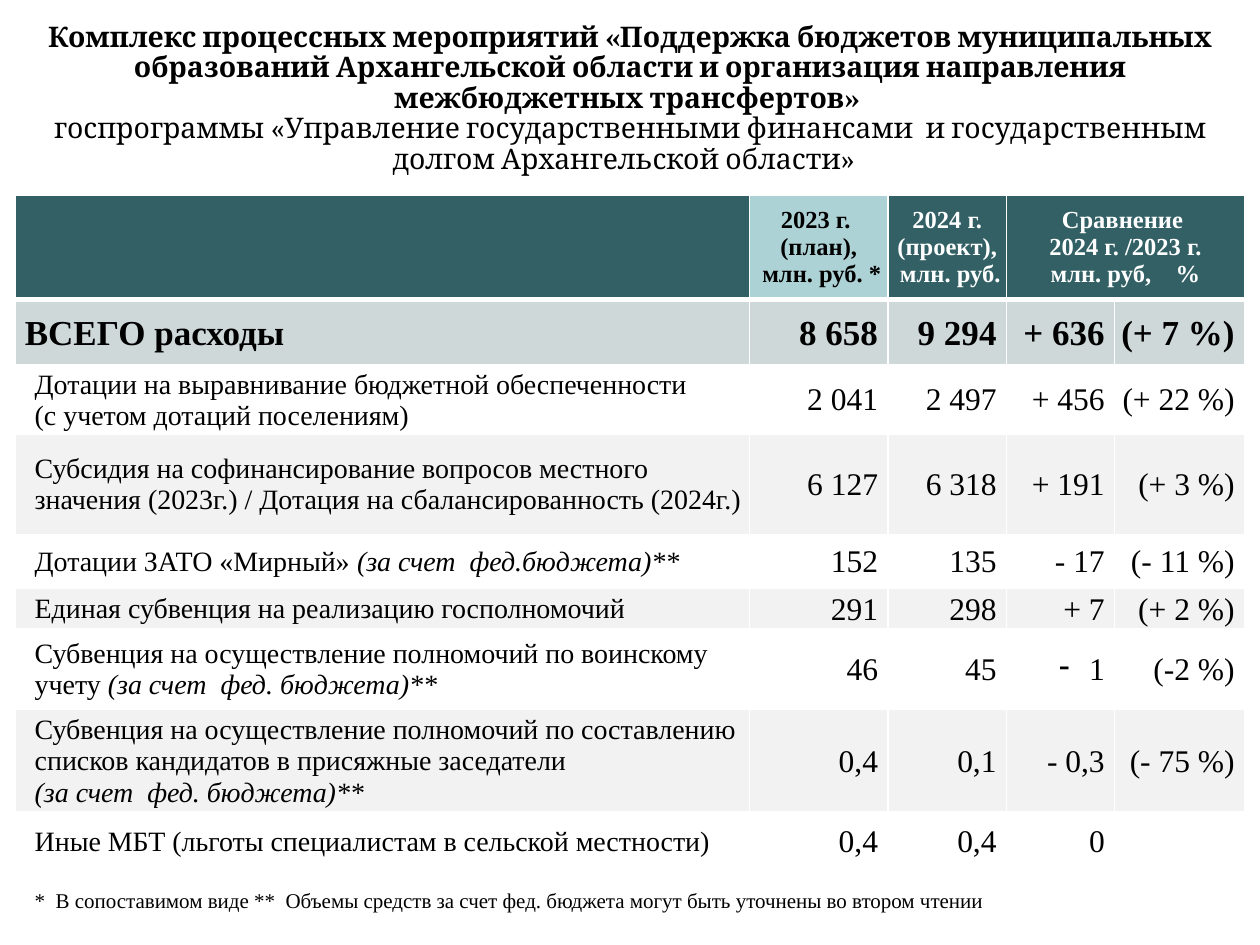
from lxml import etree
from pptx import Presentation
from pptx import util as u
from pptx.dml.color import RGBColor
from pptx.enum import text
from pptx.oxml import ns

COLORS = {
    "white": "FFFFFF",
    "black": "000000",
    "teal": "326065",
    "light_teal": "ADD2D6",
    "total": "CFD8D9",
    "band": "F2F2F2",
}
BODY_FONT = "Times New Roman"
TITLE_FONT = "Cambria"
LEFT, RIGHT, CENTER = text.PP_ALIGN.LEFT, text.PP_ALIGN.RIGHT, text.PP_ALIGN.CENTER

TITLE = [
    "Комплекс процессных мероприятий «Поддержка бюджетов муниципальных образований "
    "Архангельской области и организация направления межбюджетных трансфертов» ",
    "госпрограммы «Управление государственными финансами  и государственным долгом "
    "Архангельской области»  ",
]
HEADERS = [
    ("", "teal", "white"),
    ("2023 г. \n(план),\n млн. руб. *", "light_teal", "black"),
    ("2024 г.\n(проект),\n млн. руб.", "teal", "white"),
    ("Сравнение \n2024 г. /2023 г.\nмлн. руб,    %", "teal", "white"),
]
TOTAL = ["ВСЕГО расходы", "8 658", "9 294", "+ 636", "(+ 7 %)"]
EXPENSES = [
    ["Дотации на выравнивание бюджетной обеспеченности\n(с учетом дотаций поселениям)",
     "2 041", "2 497", "+ 456", "(+ 22 %)"],
    ["Субсидия на софинансирование вопросов местного значения (2023г.) / "
     "Дотация на сбалансированность (2024г.)",
     "6 127", "6 318", "+ 191", "(+ 3 %)"],
    ["Дотации ЗАТО «Мирный» |(за счет  фед.бюджета)**", "152", "135", "- 17", "(- 11 %)"],
    ["Единая субвенция на реализацию госполномочий", "291", "298", "+ 7", " (+ 2 %)"],
    ["Субвенция на осуществление полномочий по воинскому учету |(за счет  фед. бюджета)**",
     "46", "45", "1", "(-2 %)"],
    ["Субвенция на осуществление полномочий по составлению списков кандидатов "
     "в присяжные заседатели\n|(за счет  фед. бюджета)**",
     "0,4", "0,1", "- 0,3", "(- 75 %)"],
    ["Иные МБТ (льготы специалистам в сельской местности)", "0,4", "0,4", "0", ""],
]
DASHED_CELL = (6, 3)
FOOTNOTE = ("*  В сопоставимом виде **  Объемы средств за счет фед. бюджета "
            "могут быть уточнены во втором чтении")
COLUMN_WIDTHS = [14.81, 2.79, 2.39, 2.18, 2.62]
ROW_HEIGHTS = [2.11, 1.32, 1.37, 2.03, 1.09, 0.81, 1.63, 2.03, 1.19, 1.19]


def format_run(run, font, size, color="black", bold=False, italic=False):
    run.font.name = font
    run.font.size = u.Pt(size)
    run.font.bold = bold
    run.font.italic = italic
    run.font.color.rgb = RGBColor.from_string(COLORS[color])


def add_title(page):
    box = page.shapes.add_textbox(u.Cm(0.3), u.Cm(0.33), u.Cm(24.8), u.Cm(3.5))
    frame = box.text_frame
    frame.word_wrap = True
    frame.text = "\n".join(TITLE)
    for index, para in enumerate(frame.paragraphs):
        para.alignment = CENTER
        para.line_spacing = 0.9
        format_run(para.runs[0], TITLE_FONT, 16.2, bold=index == 0)


def set_borders(cell, bottom):
    props = cell._tc.get_or_add_tcPr()
    widths = {"a:lnL": 1, "a:lnR": 1, "a:lnT": 1, "a:lnB": bottom}
    for index, (tag, width) in enumerate(widths.items()):
        line = etree.Element(ns.qn(tag), w=str(u.Pt(width)))
        fill = etree.SubElement(line, ns.qn("a:solidFill"))
        etree.SubElement(fill, ns.qn("a:srgbClr"), val=COLORS["white"])
        props.insert(index, line)


def fill_cell(cell, content, fill, size, margins, align=LEFT, color="black",
              bold=False, bottom=1):
    cell.fill.solid()
    cell.fill.fore_color.rgb = RGBColor.from_string(COLORS[fill])
    set_borders(cell, bottom)
    cell.vertical_anchor = text.MSO_ANCHOR.MIDDLE
    cell.margin_left, cell.margin_top, cell.margin_right, cell.margin_bottom = map(u.Cm, margins)
    if not content:
        return
    lines = content.split("\n")
    cell.text_frame.text = "\n".join(lines)
    for para, line in zip(cell.text_frame.paragraphs, lines):
        para.alignment = align
        plain, _, note = line.partition("|")
        para.text = plain
        for run in para.runs:
            format_run(run, BODY_FONT, size, color, bold)
        if note:
            span = para.add_run()
            span.text = note
            format_run(span, BODY_FONT, size, color, bold, italic=True)


def add_dash_bullet(para):
    props = para._p.get_or_add_pPr()
    props.set("marL", str(u.Cm(0.6)))
    props.set("indent", str(-u.Cm(0.6)))
    etree.SubElement(props, ns.qn("a:buChar"), char="-")


def fill_row(table, row, values, fill, label_size, number_size, bold=False):
    label_left = 0.2 if bold else 0.4
    fill_cell(table.cell(row, 0), values[0], fill, label_size,
              (label_left, 0.03, 0.03, 0), bold=bold)
    for column, value in enumerate(values[1:], 1):
        fill_cell(table.cell(row, column), value, fill, number_size,
                  (0.03, 0.03, 0.2, 0), RIGHT, bold=bold)


def add_budget_table(page):
    frame = page.shapes.add_table(
        len(ROW_HEIGHTS), len(COLUMN_WIDTHS), u.Cm(0.3), u.Cm(3.93),
        u.Cm(sum(COLUMN_WIDTHS)), u.Cm(sum(ROW_HEIGHTS)))
    table = frame.table
    table.horz_banding = False
    for column, width in zip(table.columns, COLUMN_WIDTHS):
        column.width = u.Cm(width)
    for row, height in zip(table.rows, ROW_HEIGHTS):
        row.height = u.Cm(height)

    table.cell(0, 3).merge(table.cell(0, 4))
    for column, (label, fill, color) in enumerate(HEADERS):
        fill_cell(table.cell(0, column), label, fill, 14, [0.05] * 4, CENTER, color,
                  bold=True, bottom=3)
    fill_row(table, 1, TOTAL, "total", 20, 20, bold=True)
    for row, values in enumerate(EXPENSES, 2):
        fill_row(table, row, values, "band" if row % 2 else "white", 16, 18)
    add_dash_bullet(table.cell(*DASHED_CELL).text_frame.paragraphs[0])

    last = len(ROW_HEIGHTS) - 1
    table.cell(last, 0).merge(table.cell(last, len(COLUMN_WIDTHS) - 1))
    fill_cell(table.cell(last, 0), FOOTNOTE, "white", 12, (0.4, 0.03, 0.03, 0))


def main():
    deck = Presentation()
    deck.slide_width, deck.slide_height = u.Cm(25.4), u.Cm(19.05)
    page = deck.slides.add_slide(deck.slide_layouts[6])
    add_title(page)
    add_budget_table(page)
    deck.save("out.pptx")


if __name__ == "__main__":
    main()
